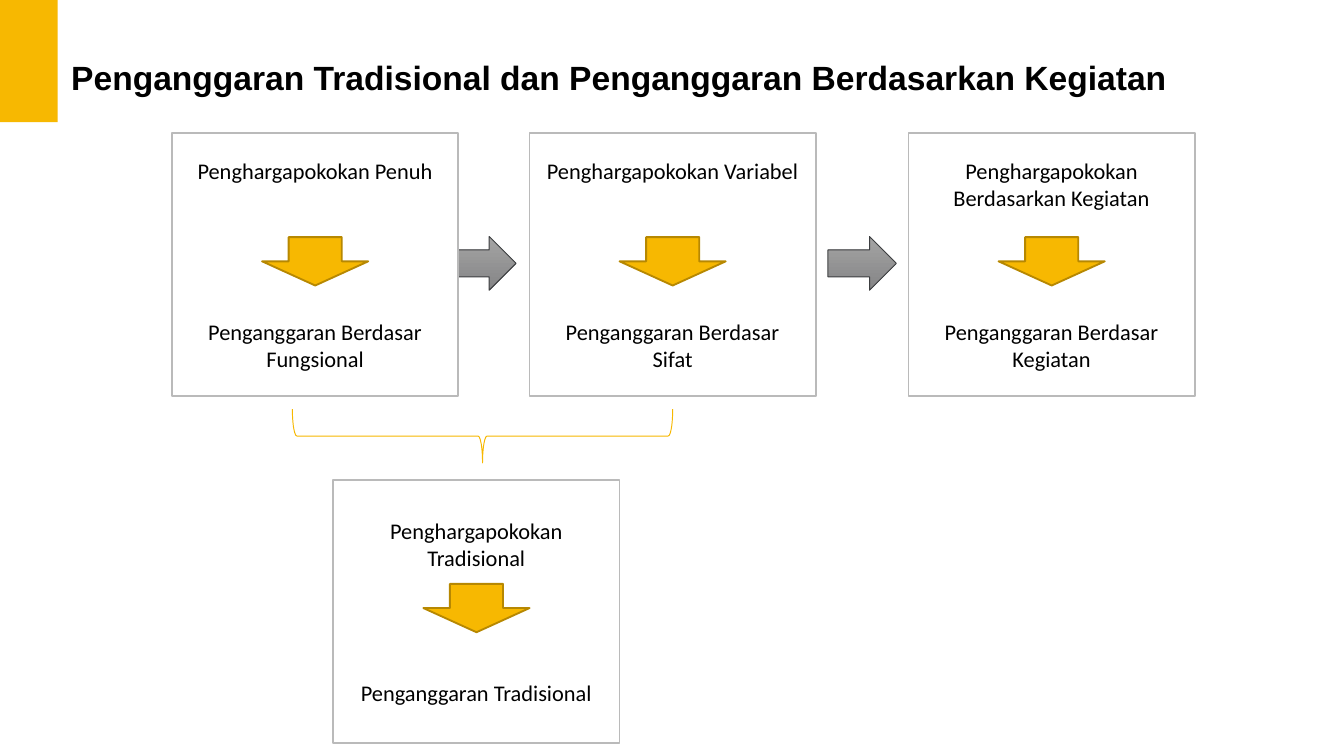
"""Build the slide comparing traditional and activity-based budgeting."""
from dataclasses import dataclass

from pptx import Presentation
from pptx.dml.color import RGBColor as Color
from pptx.enum.shapes import MSO_SHAPE as Shape
from pptx.enum.text import MSO_ANCHOR as Anchor, MSO_AUTO_SIZE as AutoSize, PP_ALIGN as Align
from pptx.util import Inches, Pt


@dataclass(frozen=True)
class Theme:
    gold: Color = Color.from_string("F7B801")
    gold_edge: Color = Color.from_string("B78801")
    white: Color = Color.from_string("FFFFFF")
    black: Color = Color.from_string("000000")
    box_edge: Color = Color.from_string("BABABA")
    grey_light: Color = Color.from_string("A4A4A4")
    grey_dark: Color = Color.from_string("858586")
    grey_edge: Color = Color.from_string("3C3E40")
    title_font: str = "Arial"
    body_font: str = "Calibri"
    title_size: Pt = Pt(18)
    body_size: Pt = Pt(12)


theme = Theme()
deck = Presentation()
deck.slide_width = Inches(10)
deck.slide_height = Inches(10) * 9 // 16
page = deck.slides.add_slide(deck.slide_layouts[5])


def add_figure(kind, left, top, width, height, fill=None, edge=None, weight=1, rotation=0):
    figure = page.shapes.add_shape(kind, Inches(left), Inches(top), Inches(width), Inches(height))
    figure.shadow.inherit = False
    figure.rotation = rotation
    if fill is None:
        figure.fill.background()
    else:
        figure.fill.solid()
        figure.fill.fore_color.rgb = fill
    if edge is None:
        figure.line.fill.background()
    else:
        figure.line.color.rgb = edge
        figure.line.width = Pt(weight)
    return figure


def style_text(para, font, size, align, bold=False):
    para.alignment = align
    for span in para.runs:
        span.font.name = font
        span.font.size = size
        span.font.bold = bold
        span.font.color.rgb = theme.black


title = page.shapes.title
title.left, title.top, title.width, title.height = Inches(0.43), Inches(0.37), Inches(8.43), Inches(0.4)
title.text_frame.text = "Penganggaran Tradisional dan Penganggaran Berdasarkan Kegiatan"
title.text_frame.word_wrap = False
title.text_frame.auto_size = AutoSize.SHAPE_TO_FIT_TEXT
title.text_frame.vertical_anchor = Anchor.TOP
style_text(title.text_frame.paragraphs[0], theme.title_font, theme.title_size, Align.LEFT, bold=True)

add_figure(Shape.RECTANGLE, 0, 0, 0.43, 0.91, theme.gold)

for left in (3.33, 6.16):
    step_arrow = add_figure(Shape.RIGHT_ARROW, left, 1.76, 0.51, 0.4, edge=theme.grey_edge, weight=0.5)
    step_arrow.fill.gradient()
    step_arrow.fill.gradient_angle = 270
    for stop, color in zip(step_arrow.fill.gradient_stops, (theme.grey_light, theme.grey_dark)):
        stop.color.rgb = color

add_figure(Shape.RIGHT_BRACE, 3.39, 1.83, 0.4, 2.83, edge=theme.gold, weight=0.5, rotation=90)

box_width, box_height = 2.13, 1.96
arrow_width, arrow_height = 0.36, 0.79
line_pitch = 14.4
boxes = [
    (1.28, 0.99, 5, ["Penghargapokokan Penuh"], ["Penganggaran Berdasar Fungsional"]),
    (3.94, 0.99, 5, ["Penghargapokokan Variabel"], ["Penganggaran Berdasar", "Sifat"]),
    (6.76, 0.99, 4, ["Penghargapokokan", "Berdasarkan Kegiatan"], ["Penganggaran Berdasar Kegiatan"]),
    (2.48, 3.57, 4, ["Penghargapokokan Tradisional"], ["Penganggaran Tradisional"]),
]
for left, top, gap_lines, costing, budgeting in boxes:
    box = add_figure(Shape.RECTANGLE, left, top, box_width, box_height, theme.white, theme.box_edge)
    frame = box.text_frame
    frame.word_wrap = True
    frame.vertical_anchor = Anchor.MIDDLE
    frame.text = "\n".join(costing + budgeting)
    for para in frame.paragraphs:
        style_text(para, theme.body_font, theme.body_size, Align.CENTER)
    frame.paragraphs[len(costing)].space_before = Pt(gap_lines * line_pitch)
    add_figure(Shape.RIGHT_ARROW, left + (box_width - arrow_width) / 2, top + 0.56,
               arrow_width, arrow_height, theme.gold, theme.gold_edge, rotation=90)

deck.save("out.pptx")
